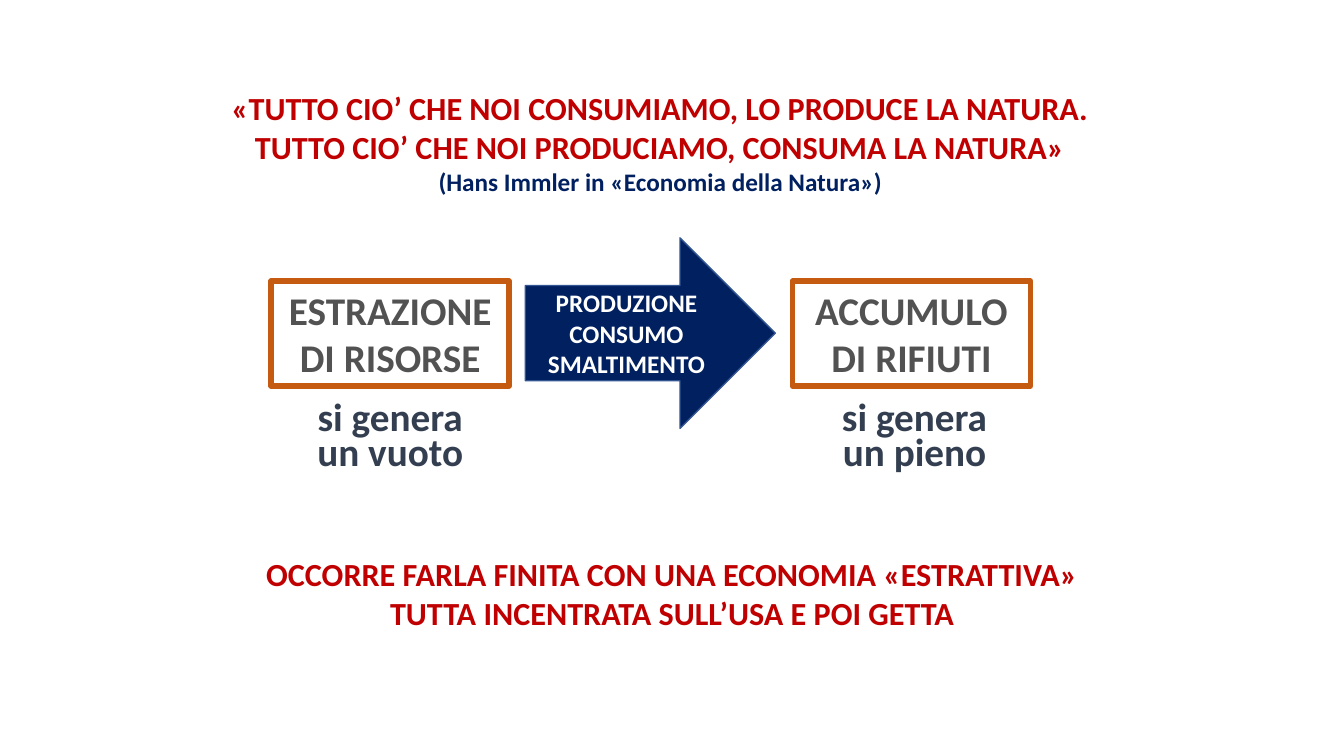
from pptx import Presentation
from pptx.dml.color import RGBColor
from pptx.enum.shapes import MSO_SHAPE
from pptx.enum.text import MSO_ANCHOR, PP_ALIGN
from pptx.util import Inches, Pt

RECT = MSO_SHAPE.RECTANGLE
ARROW = MSO_SHAPE.RIGHT_ARROW
TOP = MSO_ANCHOR.TOP
MIDDLE = MSO_ANCHOR.MIDDLE
CENTER = PP_ALIGN.CENTER

COLORS = {
    "red": "C00000",
    "navy": "002060",
    "edge": "325491",
    "orange": "C55A11",
    "gray": "525252",
    "slate": "333F50",
    "white": "FFFFFF",
}


class Deck:
    font = "Calibri"

    def __init__(self, slide):
        self.slide = slide

    def color(self, name):
        return RGBColor.from_string(COLORS[name])

    def set_text(self, shape, lines, anchor=TOP, wrap=True, pitch=None):
        frame = shape.text_frame
        frame.word_wrap = wrap
        frame.vertical_anchor = anchor
        for i, (text, size, color) in enumerate(lines):
            para = frame.add_paragraph() if i else frame.paragraphs[0]
            para.alignment = CENTER
            if pitch:
                para.line_spacing = Pt(pitch)
            run = para.add_run()
            run.text = text
            run.font.name = self.font
            run.font.size = Pt(size)
            run.font.bold = True
            run.font.color.rgb = self.color(color)

    def label(self, area, lines, **style):
        box = self.slide.shapes.add_textbox(*map(Inches, area))
        self.set_text(box, lines, **style)

    def block(self, kind, area, lines, edge, width, fill=None, anchor=TOP):
        shape = self.slide.shapes.add_shape(kind, *map(Inches, area))
        shape.shadow.inherit = False
        if fill:
            shape.fill.solid()
            shape.fill.fore_color.rgb = self.color(fill)
        else:
            shape.fill.background()
        shape.line.color.rgb = self.color(edge)
        shape.line.width = Pt(width)
        self.set_text(shape, lines, anchor=anchor)


def main():
    prs = Presentation()
    prs.slide_width = Inches(13.33)
    prs.slide_height = Inches(7.5)
    deck = Deck(prs.slides.add_slide(prs.slide_layouts[6]))

    stages = [
        (2.69, "ESTRAZIONE DI RISORSE", 3.04, "un vuoto"),
        (7.86, "ACCUMULO DI RIFIUTI", 8.24, "un pieno"),
    ]
    for left, title, inset, effect in stages:
        deck.block(RECT, (left, 2.79, 2.36, 1.04), [(title, 28, "gray")],
                   "orange", 4)
        deck.label((inset, 3.96, 1.66, 0.82),
                   [(text, 28, "slate") for text in ("si genera", effect)],
                   wrap=False, pitch=25)

    steps = ("PRODUZIONE", "CONSUMO", "SMALTIMENTO")
    deck.block(ARROW, (5.21, 2.36, 2.48, 1.89),
               [(step, 18, "white") for step in steps],
               "edge", 1, fill="navy", anchor=MIDDLE)

    deck.label((2.1, 0.83, 8.9, 1.18), [
        ("«TUTTO CIO’ CHE NOI CONSUMIAMO, LO PRODUCE LA NATURA.", 23, "red"),
        ("TUTTO CIO’ CHE NOI PRODUCIAMO, CONSUMA LA NATURA»", 23, "red"),
        ("(Hans Immler in «Economia della Natura»)", 18, "navy"),
    ])
    deck.label((2.22, 5.45, 8.9, 0.88), [
        ("OCCORRE FARLA FINITA CON UNA ECONOMIA «ESTRATTIVA»", 23, "red"),
        ("TUTTA INCENTRATA SULL’USA E POI GETTA", 23, "red"),
    ])
    prs.save("out.pptx")


if __name__ == "__main__":
    main()
